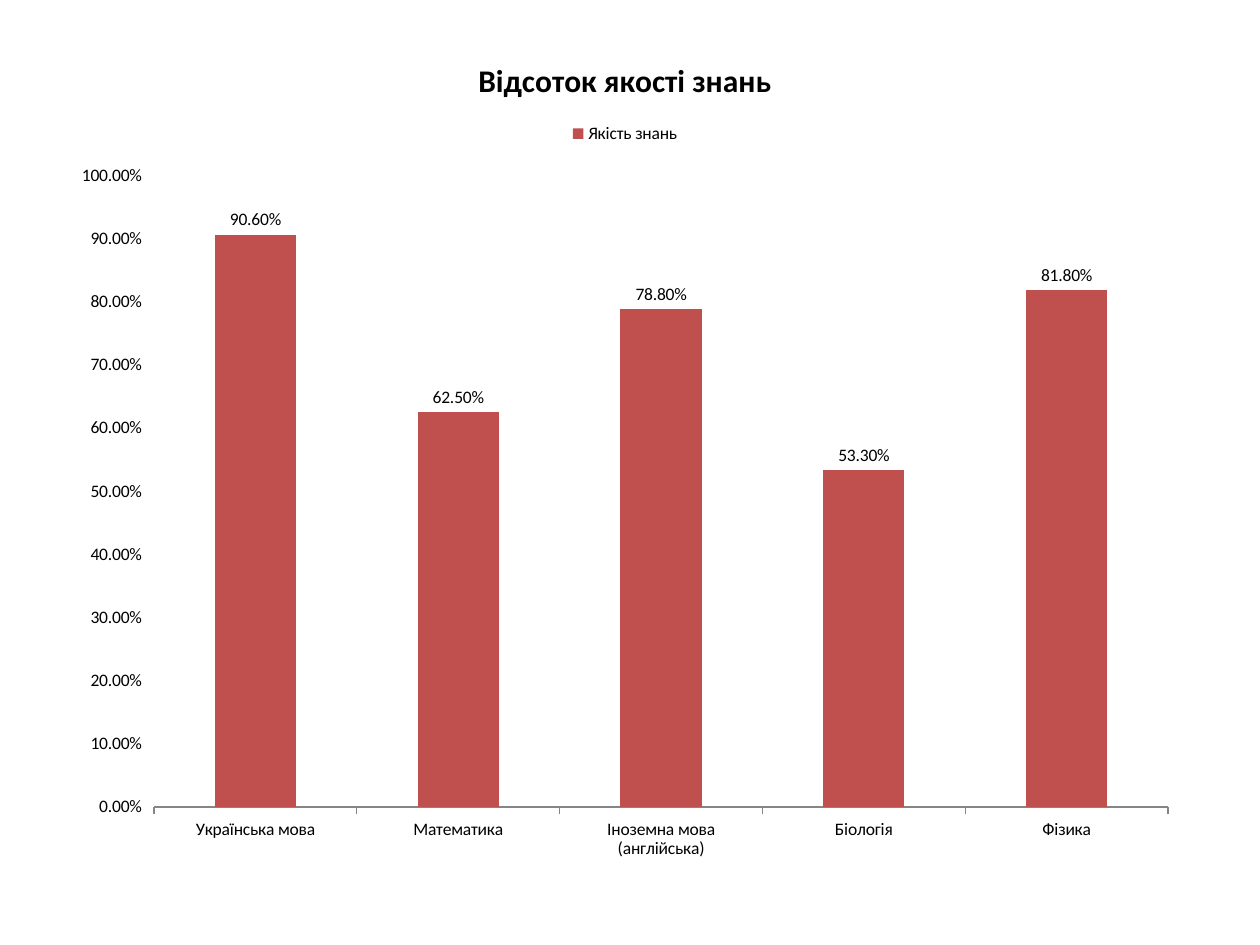
from dataclasses import dataclass

from pptx import Presentation
from pptx.chart.data import CategoryChartData
from pptx.dml.color import RGBColor
from pptx.enum.chart import XL_CHART_TYPE, XL_LABEL_POSITION, XL_LEGEND_POSITION, XL_TICK_MARK
from pptx.util import Inches, Pt


@dataclass(frozen=True)
class Theme:
    font: str = "Calibri"
    text: RGBColor = RGBColor(0x00, 0x00, 0x00)
    bar: RGBColor = RGBColor(0xC0, 0x50, 0x4D)
    axis: RGBColor = RGBColor(0x86, 0x86, 0x86)
    grid: RGBColor = RGBColor(0xFF, 0xFF, 0xFF)
    body_size: Pt = Pt(10)
    title_size: Pt = Pt(18)
    line_width: Pt = Pt(0.75)
    percent: str = "0.00%"


class SlideBuilder:
    """Adds styled elements to one slide."""

    def __init__(self, slide, theme):
        self.slide = slide
        self.theme = theme

    def style_font(self, font, size, bold=False):
        font.name = self.theme.font
        font.size = size
        font.bold = bold
        font.color.rgb = self.theme.text

    def style_line(self, line, color):
        line.color.rgb = color
        line.width = self.theme.line_width

    def column_chart(self, title, series_name, values, left, top, width, height):
        t = self.theme
        data = CategoryChartData(number_format=t.percent)
        data.categories = list(values)
        data.add_series(series_name, list(values.values()))
        chart = self.slide.shapes.add_chart(
            XL_CHART_TYPE.COLUMN_CLUSTERED, left, top, width, height, data
        ).chart
        self.style_font(chart.font, t.body_size)

        chart.has_title = True
        tf = chart.chart_title.text_frame
        tf.text = title
        self.style_font(tf.paragraphs[0].font, t.title_size, bold=True)
        chart.chart_title.include_in_layout = False

        chart.has_legend = True
        chart.legend.position = XL_LEGEND_POSITION.TOP
        chart.legend.include_in_layout = False

        self.style_columns(chart.plots[0])
        self.style_axes(chart)

    def style_columns(self, plot):
        t = self.theme
        plot.gap_width = 150
        plot.vary_by_categories = False
        fill = plot.series[0].format.fill
        fill.solid()
        fill.fore_color.rgb = t.bar
        plot.has_data_labels = True
        labels = plot.data_labels
        labels.show_value = True
        labels.number_format = t.percent
        labels.number_format_is_linked = False
        labels.position = XL_LABEL_POSITION.OUTSIDE_END

    def style_axes(self, chart):
        t = self.theme
        category, value = chart.category_axis, chart.value_axis
        category.major_tick_mark = XL_TICK_MARK.OUTSIDE
        self.style_line(category.format.line, t.axis)
        value.minimum_scale, value.maximum_scale, value.major_unit = 0, 1, 0.1
        value.major_tick_mark = XL_TICK_MARK.OUTSIDE
        value.format.line.fill.background()
        value.has_major_gridlines = True
        self.style_line(value.major_gridlines.format.line, t.grid)
        value.tick_labels.number_format = t.percent
        value.tick_labels.number_format_is_linked = False


def main():
    prs = Presentation()
    prs.slide_width, prs.slide_height = Inches(10), Inches(7.5)
    s = SlideBuilder(prs.slides.add_slide(prs.slide_layouts[6]), Theme())
    quality = {
        "Українська мова": 0.906,
        "Математика": 0.625,
        "Іноземна мова (англійська)": 0.788,
        "Біологія": 0.533,
        "Фізика": 0.818,
    }
    s.column_chart(
        "Відсоток якості знань", "Якість знань", quality,
        Inches(0.47), Inches(0.23), Inches(8.98), Inches(6.72),
    )
    prs.save("out.pptx")


if __name__ == "__main__":
    main()
